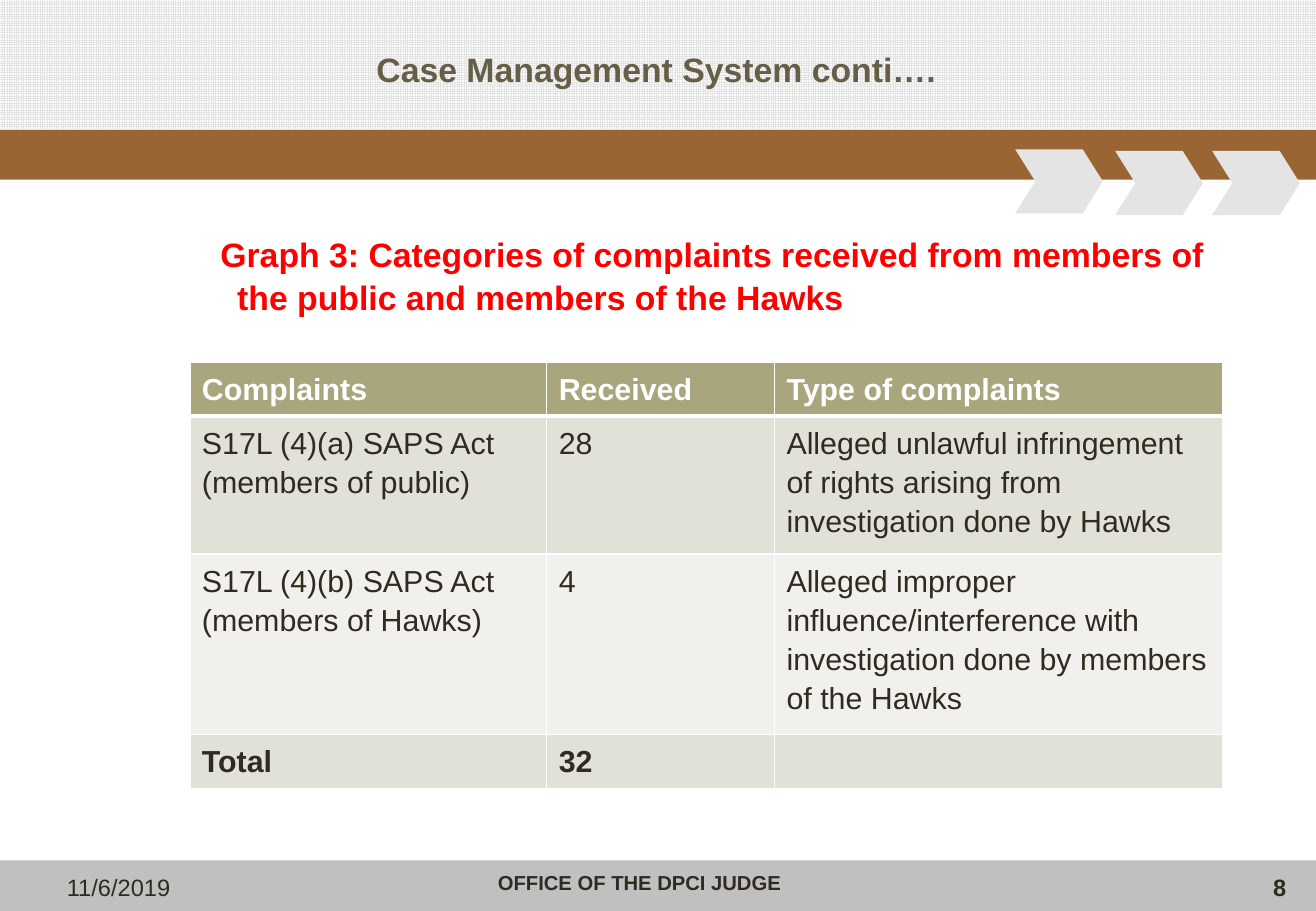
from lxml.etree import SubElement
from pptx import Presentation
from pptx.dml.color import RGBColor
from pptx.enum.dml import MSO_PATTERN
from pptx.enum.shapes import MSO_SHAPE
from pptx.enum.text import MSO_ANCHOR, PP_ALIGN
from pptx.oxml.ns import qn
from pptx.util import Pt

WIDTH, HEIGHT = 780, 540
COLUMN_WIDTHS = [211.5, 135, 265.5]
ROW_HEIGHTS = [32, 81, 107, 32]
ROW_FILLS = ["A9A57C", "E2E1D7", "F1F0EC", "E2E1D7"]
COMPLAINTS = [
    ["Complaints", "Received", "Type of complaints"],
    ["S17L (4)(a) SAPS Act\n(members of public)", "28",
     "Alleged unlawful infringement of rights arising from investigation done by Hawks"],
    ["S17L (4)(b) SAPS Act (members of Hawks)", "4",
     "Alleged improper influence/interference with investigation done by members of the Hawks"],
    ["Total", "32", ""],
]


def color(value):
    return RGBColor.from_string(value)


class SlideBuilder:
    font = "Arial"
    ink = "2F2B20"
    pale = "E4E4E4"
    white = "FFFFFF"

    def __init__(self, slide):
        self.slide = slide

    def shape(self, kind, left, top, width, height, fill):
        shape = self.slide.shapes.add_shape(kind, Pt(left), Pt(top), Pt(width), Pt(height))
        shape.shadow.inherit = False
        shape.line.fill.background()
        shape.fill.solid()
        shape.fill.fore_color.rgb = color(fill)
        return shape

    def grid_panel(self, left, top, width, height):
        panel = self.shape(MSO_SHAPE.RECTANGLE, left, top, width, height, self.pale)
        panel.fill.patterned()
        panel.fill.pattern = MSO_PATTERN.SMALL_GRID
        panel.fill.fore_color.rgb = color(self.pale)
        panel.fill.back_color.rgb = color(self.white)

    def chevron(self, left, top):
        chevron = self.shape(MSO_SHAPE.CHEVRON, left, top, 52, 38, self.pale)
        chevron.adjustments[0] = 0.314

    def run(self, paragraph, text, size, ink, bold):
        run = paragraph.add_run()
        run.text = text
        run.font.name = self.font
        run.font.size = Pt(size)
        run.font.bold = bold
        run.font.color.rgb = color(ink)

    def text(self, text, left, top, width, height, size, ink=ink, bold=True,
             align=PP_ALIGN.LEFT, anchor=MSO_ANCHOR.TOP):
        box = self.slide.shapes.add_textbox(Pt(left), Pt(top), Pt(width), Pt(height))
        frame = box.text_frame
        frame.word_wrap = True
        frame.vertical_anchor = anchor
        paragraph = frame.paragraphs[0]
        paragraph.alignment = align
        self.run(paragraph, text, size, ink, bold)
        return paragraph

    def hanging_text(self, text, left, top, width, height, size, ink, margin, indent):
        paragraph = self.text(text, left, top, width, height, size, ink)
        paragraph.line_spacing = 1.05
        properties = paragraph._p.get_or_add_pPr()
        properties.set("marL", str(Pt(margin)))
        properties.set("indent", str(Pt(indent)))

    def border(self, cell, side, width):
        line = SubElement(cell._tc.get_or_add_tcPr(), qn(f"a:ln{side}"), w=str(Pt(width)))
        SubElement(SubElement(line, qn("a:solidFill")), qn("a:srgbClr"), val=self.white)

    def cell(self, cell, text, fill, ink, bold, top_border, bottom_border):
        for side, width in zip("LRTB", (1, 1, top_border, bottom_border)):
            self.border(cell, side, width)
        cell.fill.solid()
        cell.fill.fore_color.rgb = color(fill)
        for index, line in enumerate(text.split("\n") if text else []):
            frame = cell.text_frame
            paragraph = frame.add_paragraph() if index else frame.paragraphs[0]
            paragraph.line_spacing = 1.15
            self.run(paragraph, line, 18, ink, bold)

    def table(self, rows, left, top, widths, heights, fills):
        table = self.slide.shapes.add_table(
            len(rows), len(widths), Pt(left), Pt(top), Pt(sum(widths)), Pt(sum(heights))).table
        for column, width in zip(table.columns, widths):
            column.width = Pt(width)
        for row, height in zip(table.rows, heights):
            row.height = Pt(height)
        last = len(rows) - 1
        for r, (texts, fill) in enumerate(zip(rows, fills)):
            for c, text in enumerate(texts):
                self.cell(table.cell(r, c), text, fill,
                          ink=self.ink if r else self.white, bold=r in (0, last),
                          top_border=3 if r == 1 else 1, bottom_border=1 if r else 3)


def main():
    presentation = Presentation()
    presentation.slide_width, presentation.slide_height = Pt(WIDTH), Pt(HEIGHT)
    builder = SlideBuilder(presentation.slides.add_slide(presentation.slide_layouts[6]))

    builder.shape(MSO_SHAPE.RECTANGLE, 0, 510, WIDTH, 30, "C0C0C0")
    builder.shape(MSO_SHAPE.RECTANGLE, 0, 77, WIDTH, 29.5, "996633")
    for left, top in ((661, 89.5), (718.5, 89.5), (601.75, 88.5)):
        builder.chevron(left, top)
    builder.grid_panel(0, 0, WIDTH, 77)

    builder.text("OFFICE OF THE DPCI JUDGE", 288, 512.5, 204, 22, 12)
    builder.text("Case Management System conti….", 38, 9.5, 702, 62.5, 20, "675E47",
                 align=PP_ALIGN.CENTER, anchor=MSO_ANCHOR.MIDDLE)
    builder.text("11/6/2019", 32.5, 514, 182, 24, 14, bold=False)
    builder.text("8", 587.5, 514, 182, 24, 14, align=PP_ALIGN.RIGHT)
    builder.hanging_text(
        "Graph 3: Categories of complaints received from members of "
        "the public and members of the Hawks",
        83.5, 134, 657.5, 56, 20, "FF0000", margin=50, indent=-10)
    builder.table(COMPLAINTS, 112.5, 214.5, COLUMN_WIDTHS, ROW_HEIGHTS, ROW_FILLS)

    presentation.save("out.pptx")


if __name__ == "__main__":
    main()
